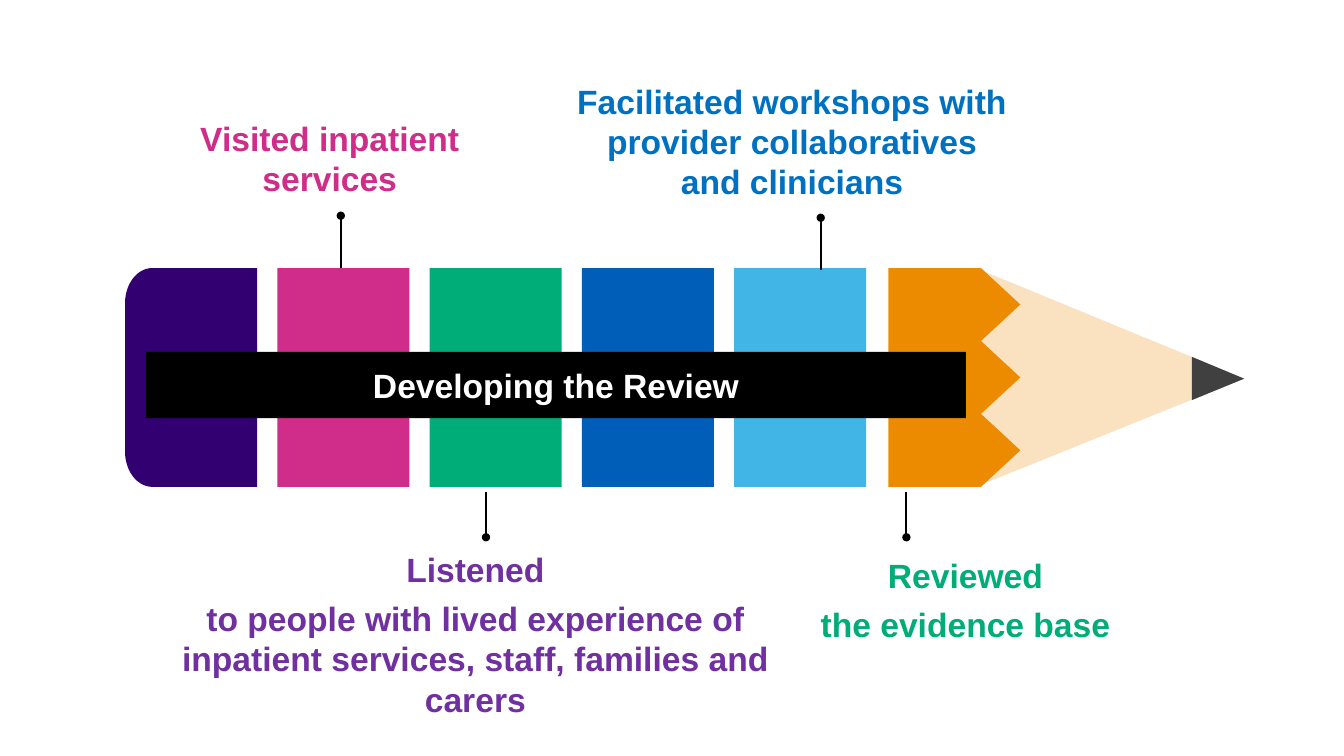
import math

import pptx
import pptx.dml.color
import pptx.enum.shapes
import pptx.enum.text
import pptx.oxml.ns
import pptx.util
from lxml import etree

PX = 9144  # EMU per px, 100 px to the inch
SHAPES = pptx.enum.shapes.MSO_SHAPE
ANCHOR = pptx.enum.text.MSO_ANCHOR

# Pencil body
BODY_TOP, BODY_HEIGHT = 266, 217
BODY_BOTTOM = BODY_TOP + BODY_HEIGHT
BAND_LEFT, BAND_WIDTH, BAND_PITCH = 124, 131, 151
BAND_COLOURS = ["D02C8A", "00AD79", "005EB8", "41B6E6"]
ORANGE = "ED8B00"


def px(length):
    return pptx.util.Emu(round(length * PX))


def colour(hex_string):
    return pptx.dml.color.RGBColor.from_string(hex_string)


def add_sub(parent, tag, **attributes):
    return etree.SubElement(parent, pptx.oxml.ns.qn(tag), **attributes)


def paint(shape, fill, opacity=100):
    shape.shadow.inherit = False
    shape.fill.solid()
    shape.fill.fore_color.rgb = colour(fill)
    shape.line.fill.background()
    if opacity < 100:
        solid = shape.fill._xPr.find(pptx.oxml.ns.qn("a:solidFill"))
        add_sub(solid[0], "a:alpha", val=str(opacity * 1000))


def add_block(slide, left, top, width, height, fill):
    block = slide.shapes.add_shape(
        SHAPES.RECTANGLE, px(left), px(top), px(width), px(height))
    paint(block, fill)
    return block


def add_outline(slide, points, fill):
    builder = slide.shapes.build_freeform(
        round(points[0][0] * PX), round(points[0][1] * PX), scale=1.0)
    builder.add_line_segments(
        [(round(x * PX), round(y * PX)) for x, y in points[1:]], close=True)
    paint(builder.convert_to_shape(), fill)


def add_point(slide, left, top, length, thickness, fill, opacity=100):
    """Triangle pointing right; left and top are those of its turned box."""
    shift = (length - thickness) / 2
    point = slide.shapes.add_shape(
        SHAPES.ISOSCELES_TRIANGLE, px(left + shift), px(top - shift),
        px(thickness), px(length))
    point.rotation = 90
    point.adjustments[0] = 0.505
    paint(point, fill, opacity)


def add_pin(slide, x, dot_y, end_y):
    pin = slide.shapes.add_connector(
        pptx.enum.shapes.MSO_CONNECTOR.STRAIGHT,
        px(x), px(dot_y), px(x), px(end_y))
    pin.line.width = pptx.util.Pt(1.5)
    pin.line.color.rgb = colour("000000")
    add_sub(pin.line._get_or_add_ln(), "a:headEnd", type="oval")
    add_sub(pin._element.spPr, "a:effectLst")


def write(frame, text, text_colour, space_after=0):
    frame.word_wrap = True
    frame.text = text
    for paragraph in frame.paragraphs:
        paragraph.alignment = pptx.enum.text.PP_ALIGN.CENTER
        paragraph.space_after = pptx.util.Pt(space_after)
        for run in paragraph.runs:
            run.font.name = "Arial"
            run.font.size = pptx.util.Pt(24)
            run.font.bold = True
            run.font.color.rgb = colour(text_colour)


def add_label(slide, left, top, width, height, text, text_colour):
    label = slide.shapes.add_textbox(px(left), px(top), px(width), px(height))
    write(label.text_frame, text, text_colour, space_after=6)
    label.text_frame.auto_size = pptx.enum.text.MSO_AUTO_SIZE.SHAPE_TO_FIT_TEXT


def add_eraser(slide):
    radius_x, radius_y, steps = 27, 35, 24
    right = BAND_LEFT + BAND_WIDTH
    corners = [(BODY_BOTTOM - radius_y, 90), (BODY_TOP + radius_y, 180)]
    points = [(right, BODY_TOP), (right, BODY_BOTTOM)]
    for centre_y, start in corners:
        for step in range(steps + 1):
            angle = math.radians(start + 90 * step / steps)
            points.append((BAND_LEFT + radius_x + radius_x * math.cos(angle),
                           centre_y + radius_y * math.sin(angle)))
    add_outline(slide, points, "330072")


def add_collar(slide):
    left, notch, peak, teeth = 881, 973, 1012, 3
    half_tooth = BODY_HEIGHT / (2 * teeth)
    zigzag = [(peak if i % 2 else notch, BODY_TOP + i * half_tooth)
              for i in range(2 * teeth + 1)]
    add_outline(slide, [(left, BODY_TOP), *zigzag, (left, BODY_BOTTOM)], ORANGE)


def main():
    deck = pptx.Presentation()
    deck.slide_width, deck.slide_height = px(1333), px(750)
    slide = deck.slides.add_slide(deck.slide_layouts[6])

    # Pencil
    add_eraser(slide)
    for position, band_colour in enumerate(BAND_COLOURS, start=1):
        add_block(slide, BAND_LEFT + position * BAND_PITCH, BODY_TOP,
                  BAND_WIDTH, BODY_HEIGHT, band_colour)
    add_collar(slide)
    add_point(slide, 968, BODY_TOP, 266, BODY_HEIGHT, ORANGE, opacity=25)
    add_point(slide, 1182, 354, 52, 43, "404040")

    # Title bar
    title = add_block(slide, 145, 349, 813, 66, "000000")
    write(title.text_frame, "Developing the Review", "FFFFFF")
    title.text_frame.vertical_anchor = ANCHOR.MIDDLE

    # Pins from the pencil to the labels
    for x, dot_y, end_y in [(338, 214, 266), (814, 216, 268),
                            (482, 533, 488), (899, 533, 488)]:
        add_pin(slide, x, dot_y, end_y)

    # Labels
    add_label(slide, 173, 112, 308, 91,
              "Visited inpatient services", "D02C8A")
    add_label(slide, 559, 75, 453, 131,
              "Facilitated workshops with provider collaboratives and clinicians",
              "0070C0")
    add_label(slide, 145, 540, 653, 180,
              "Listened\nto people with lived experience of inpatient services, "
              "staff, families and carers", "7030A0")
    add_label(slide, 777, 546, 361, 99,
              "Reviewed\nthe evidence base", "00AD79")

    deck.save("out.pptx")


if __name__ == "__main__":
    main()
